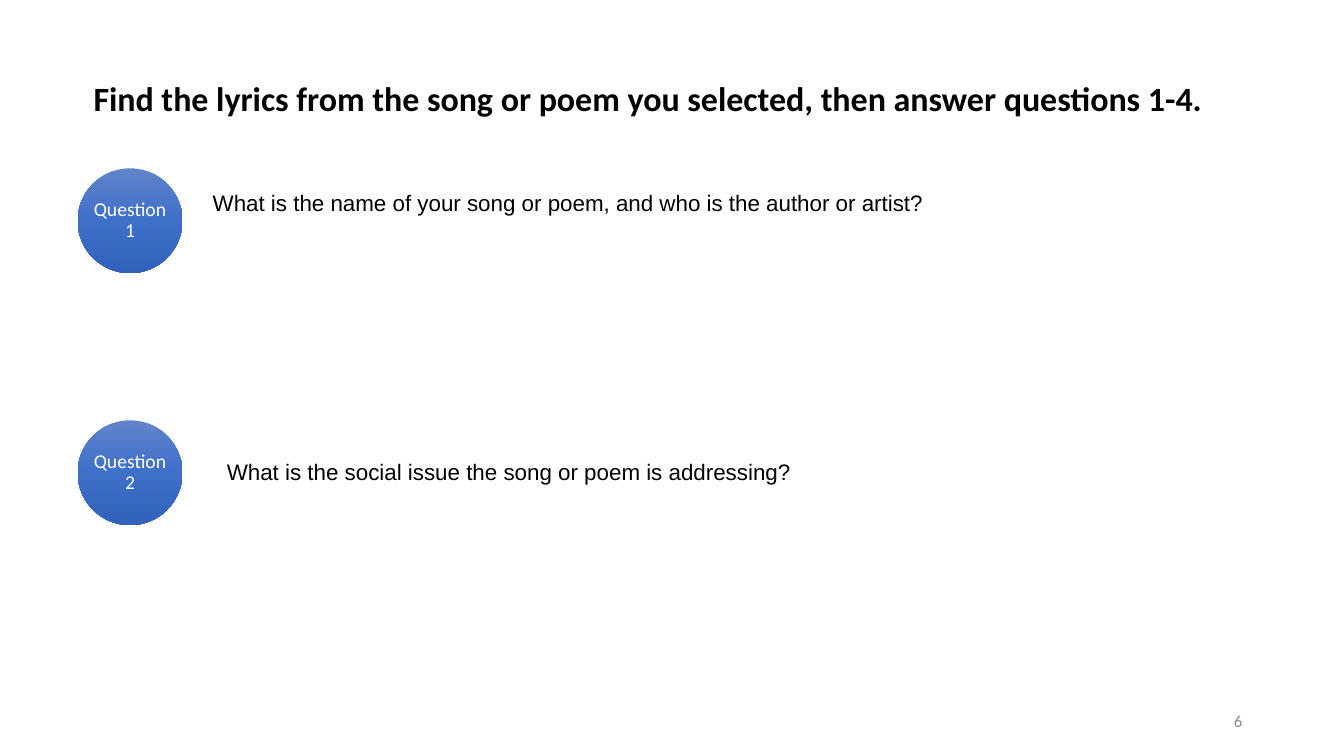
from copy import deepcopy

from pptx import Presentation
from pptx.dml.color import RGBColor
from pptx.enum import shapes, text
from pptx.util import Inches, Pt

COLORS = {
    "ink": "000000",
    "label": "FFFFFF",
    "page": "8C8C8C",
    "circle_top": "6183CB",
    "circle_middle": "3E70CA",
    "circle_bottom": "3062BB",
}
QUESTION_TOP = 1.67
QUESTION_PITCH = 2.5
# wording, left, offset below the circle's top, width, height, inset
QUESTIONS = [
    ("What is the name of your song or poem, and who is the author or artist?",
     2.11, 0.12, 7.87, 0.92, 0.25),
    ("What is the social issue the song or poem is addressing?",
     2.25, 0.28, 8.43, 1.21, 0.13),
]


class QuestionSlide:
    """Holds the style and the slide being filled."""

    heading_font = "Calibri"
    body_font = "Arial"

    def __init__(self, presentation):
        self.slide = presentation.slides.add_slide(presentation.slide_layouts[6])

    def fill_text(self, frame, wording, font, size, color, bold=False,
                  align=text.PP_ALIGN.LEFT, anchor=text.MSO_ANCHOR.MIDDLE,
                  insets=(0.1, 0.05, 0.1, 0.05), line_spacing=0.9):
        frame.word_wrap = True
        frame.vertical_anchor = anchor
        (frame.margin_left, frame.margin_top,
         frame.margin_right, frame.margin_bottom) = map(Inches, insets)
        frame.text = wording
        paragraph = frame.paragraphs[0]
        paragraph.alignment = align
        paragraph.line_spacing = line_spacing
        style = paragraph.runs[0].font
        style.name, style.size, style.bold = font, Pt(size), bold
        style.color.rgb = RGBColor.from_string(COLORS[color])

    def text_box(self, box, wording, font, size, color, **layout):
        area = self.slide.shapes.add_textbox(*map(Inches, box))
        self.fill_text(area.text_frame, wording, font, size, color, **layout)

    def circle(self, left, top, diameter, wording):
        """Draw a gradient circle with its label inside."""
        badge = self.slide.shapes.add_shape(
            shapes.MSO_SHAPE.OVAL,
            *map(Inches, (left, top, diameter, diameter)))
        badge.shadow.inherit = False
        badge.line.fill.background()
        badge.fill.gradient()
        badge.fill.gradient_angle = 270
        stop_list = badge._element.spPr.find(".//{*}gsLst")
        stop_list.append(deepcopy(stop_list[-1]))
        tones = ("circle_top", "circle_middle", "circle_bottom")
        for index, (stop, tone) in enumerate(zip(badge.fill.gradient_stops, tones)):
            stop.position = index / 2
            stop.color.rgb = RGBColor.from_string(COLORS[tone])
        self.fill_text(badge.text_frame, wording, self.heading_font, 14, "label",
                       align=text.PP_ALIGN.CENTER, insets=(0, 0, 0, 0))


def main():
    presentation = Presentation()
    presentation.slide_width = Inches(13.33)
    presentation.slide_height = Inches(7.5)
    page = QuestionSlide(presentation)

    page.text_box((0.83, 0.77, 11.57, 0.45),
                  "Find the lyrics from the song or poem you selected, "
                  "then answer questions 1-4.",
                  page.heading_font, 24.3, "ink", bold=True)

    for index, (wording, left, offset, width, height, inset) in enumerate(QUESTIONS):
        top = QUESTION_TOP + index * QUESTION_PITCH
        page.circle(0.77, top, 1.04, f"Question {index + 1}")
        page.text_box((left, top + offset, width, height), wording,
                      page.body_font, 16, "ink", anchor=text.MSO_ANCHOR.TOP,
                      insets=(0, inset, inset, inset))

    page.text_box((9.42, 6.95, 3, 0.4), "6", page.heading_font, 12, "page",
                  align=text.PP_ALIGN.RIGHT, line_spacing=1.0)
    presentation.save("out.pptx")


if __name__ == "__main__":
    main()
